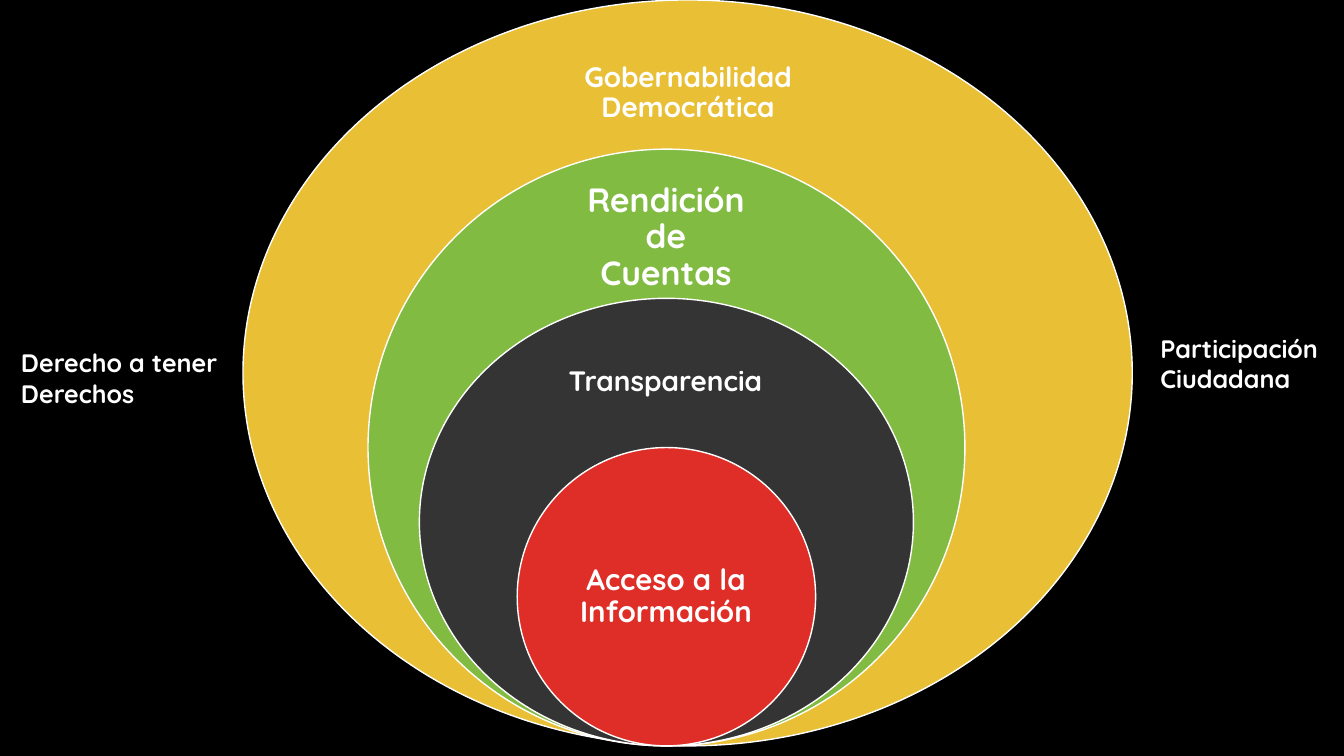
from pptx import Presentation
from pptx.dml.color import RGBColor
from pptx.enum.shapes import MSO_SHAPE as Shape
from pptx.enum.text import MSO_ANCHOR as Anchor, MSO_AUTO_SIZE as AutoSize, PP_ALIGN as Align
from pptx.util import Inches, Pt

BLACK = RGBColor(0x00, 0x00, 0x00)
WHITE = RGBColor(0xFF, 0xFF, 0xFF)
YELLOW = RGBColor(0xE9, 0xBF, 0x35)
GREEN = RGBColor(0x81, 0xBB, 0x42)
GRAY = RGBColor(0x34, 0x34, 0x34)
RED = RGBColor(0xDF, 0x2E, 0x28)

FONT = "Quicksand"
BASE = 7.4  # all ellipses rest on this line
RING_STEP = 1.48

# center x, width, fill, label, label (left, top, width, height), size, inset
RINGS = [
    (6.82, 8.82, YELLOW, "Gobernabilidad Democrática", (5.59, 0.37, 2.47, 1.11), 20, 0.16),
    (6.61, 5.92, GREEN, "Rendición de Cuentas", (5.57, 1.83, 2.07, 1.06), 24, 0.19),
    (6.61, 4.9, GRAY, "Transparencia", (5.46, 3.29, 2.28, 1), 20, 0.16),
    (6.61, 2.96, RED, "Acceso a la Información", (5.56, 5.18, 2.09, 1.48), 21, 0.16),
]

SIDE_LABELS = [
    ("Derecho a tener Derechos", (0.11, 3.4, 2.36, 0.71)),
    ("Participación Ciudadana", (11.41, 3.26, 2.07, 0.71)),
]


def add_ellipse(page, center, width, height, fill):
    """Add an outlined ellipse that stands on the common base line."""
    ellipse = page.shapes.add_shape(
        Shape.OVAL, Inches(center - width / 2), Inches(BASE - height),
        Inches(width), Inches(height))
    ellipse.shadow.inherit = False
    ellipse.fill.solid()
    ellipse.fill.fore_color.rgb = fill
    ellipse.line.color.rgb = WHITE
    ellipse.line.width = Pt(1)


def add_label(page, text, area, size=18, align=Align.LEFT, anchor=Anchor.TOP,
              inset=None, line_spacing=None, auto_size=AutoSize.NONE):
    box = page.shapes.add_textbox(*(Inches(length) for length in area))
    frame = box.text_frame
    frame.word_wrap = True
    frame.auto_size = auto_size
    frame.vertical_anchor = anchor
    if inset is not None:
        frame.margin_left = frame.margin_right = Inches(inset)
        frame.margin_top = frame.margin_bottom = Inches(inset)
    para = frame.paragraphs[0]
    para.alignment = align
    para.line_spacing = line_spacing
    span = para.add_run()
    span.text = text
    span.font.name = FONT
    span.font.size = Pt(size)
    span.font.bold = True
    span.font.color.rgb = WHITE


def main():
    deck = Presentation()
    deck.slide_width = Inches(13.33)
    deck.slide_height = Inches(7.5)
    page = deck.slides.add_slide(deck.slide_layouts[6])
    page.background.fill.solid()
    page.background.fill.fore_color.rgb = BLACK

    for index, (center, width, fill, text, area, size, inset) in enumerate(RINGS):
        add_ellipse(page, center, width, BASE - index * RING_STEP, fill)
        add_label(page, text, area, size=size, align=Align.CENTER,
                  anchor=Anchor.MIDDLE, inset=inset, line_spacing=0.9)
    for text, area in SIDE_LABELS:
        add_label(page, text, area, auto_size=AutoSize.SHAPE_TO_FIT_TEXT)

    deck.save("out.pptx")


if __name__ == "__main__":
    main()
